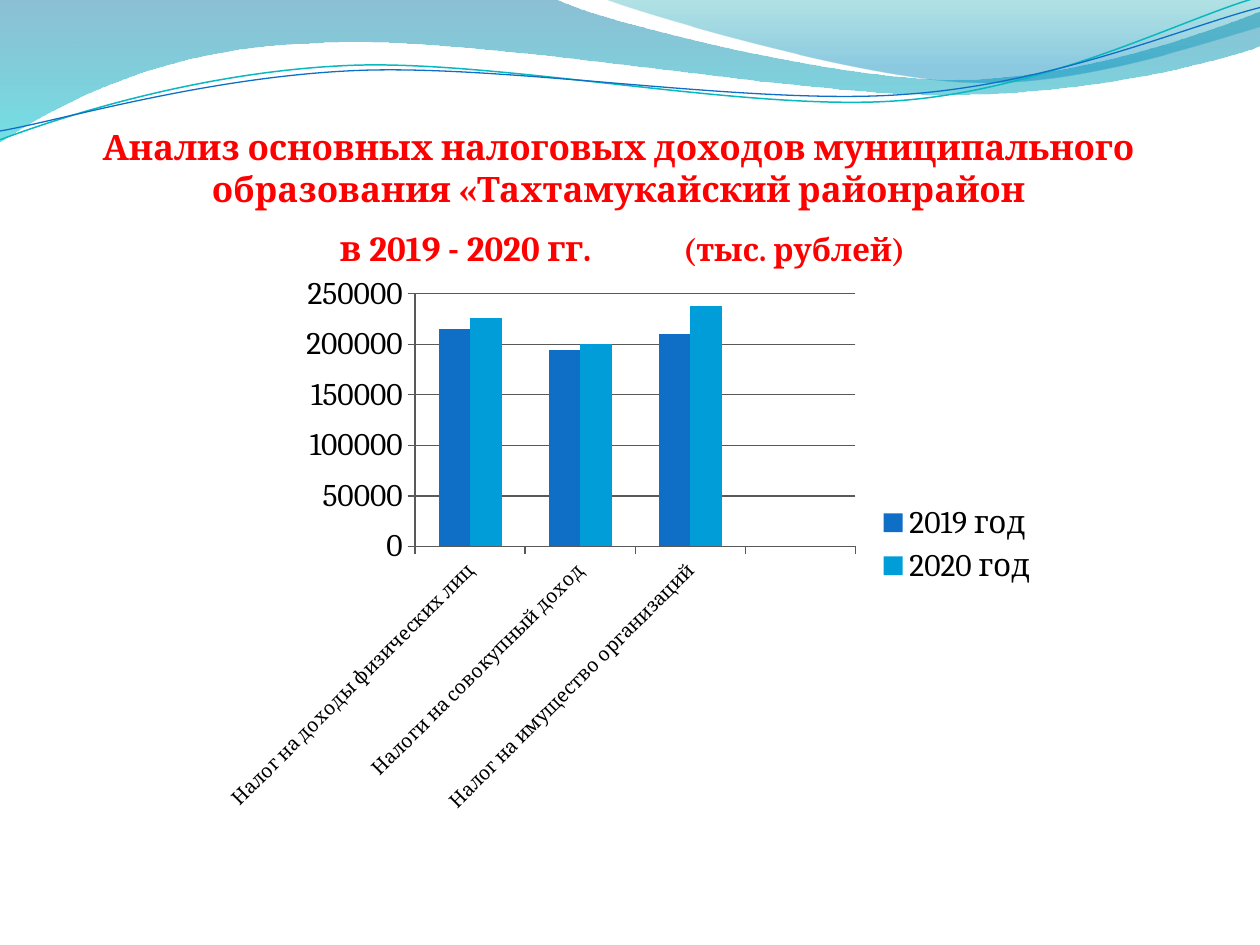
from lxml import etree
from pptx import Presentation
from pptx.chart.data import CategoryChartData
from pptx.dml.color import RGBColor
from pptx.enum.chart import XL_CHART_TYPE, XL_LEGEND_POSITION, XL_TICK_MARK
from pptx.enum.text import MSO_ANCHOR, PP_ALIGN
from pptx.oxml import parse_xml
from pptx.oxml.ns import nsdecls, qn
from pptx.util import Inches, Pt

COLUMNS = XL_CHART_TYPE.COLUMN_CLUSTERED
LEGEND_RIGHT = XL_LEGEND_POSITION.RIGHT
TICK_OUTSIDE = XL_TICK_MARK.OUTSIDE
BOTTOM = MSO_ANCHOR.BOTTOM
CENTER = PP_ALIGN.CENTER

RED = RGBColor(0xFF, 0x00, 0x00)
BLACK = RGBColor(0x00, 0x00, 0x00)
GRAY = RGBColor(0x59, 0x59, 0x59)
BLUE = RGBColor(0x0F, 0x6F, 0xC6)
SKY = RGBColor(0x00, 0x9D, 0xD9)
TEAL = RGBColor(0x0A, 0xB8, 0xBF)
DEEP_BLUE = RGBColor(0x00, 0x74, 0xA1)
CYAN = RGBColor(0x00, 0xC6, 0xCF)
DARK_CYAN = RGBColor(0x00, 0xA1, 0xA9)
MID_BLUE = RGBColor(0x00, 0x8B, 0xBF)
FONT = "Cambria"

presentation = Presentation()
presentation.slide_width = Inches(10)
presentation.slide_height = Inches(7.5)
slide = presentation.slides.add_slide(presentation.slide_layouts[6])


def add_wave(segments, closed):
    """Draw a path of points (x, y) and cubic curves (x1, y1, x2, y2, x3, y3)."""
    anchors = [(Inches(segment[-2]), Inches(segment[-1])) for segment in segments]
    builder = slide.shapes.build_freeform(*anchors[0])
    builder.add_line_segments(anchors[1:], close=closed)
    shape = builder.convert_to_shape()
    shape.shadow.inherit = False
    # Turn straight segments into curves where control points are given
    lines = list(shape._element.spPr.iter(qn("a:lnTo")))
    for line, segment in zip(lines, segments[1:]):
        if len(segment) == 2:
            continue
        line.tag = qn("a:cubicBezTo")
        line.remove(line[0])
        for x, y in zip(segment[::2], segment[1::2]):
            point = etree.SubElement(line, qn("a:pt"))
            point.set("x", str(Inches(x) - shape.left))
            point.set("y", str(Inches(y) - shape.top))
    return shape


# Filled waves: path, then gradient stops (position, colour, opacity in percent)
filled_waves = [
    ([(0, 0), (4.4, -0.01), (4.76, 0.17, 6.64, 0.63, 7.58, 0.63),
      (8.53, 0.63, 9.58, 0.26, 10, 0.09), (10.01, 0.36),
      (9.83, 0.44, 8.7, 0.76, 7.46, 0.75), (6.22, 0.75, 3.82, 0.28, 2.57, 0.34),
      (1.29, 0.36, 0.46, 0.83, -0.01, 1.13)],
     [(0, DEEP_BLUE, 45), (1, CYAN, 55)]),
    ([(4.79, -0.01), (5.09, 0.11, 6.82, 0.62, 7.69, 0.65),
      (8.56, 0.69, 9.61, 0.32, 10, 0.21), (10, 0)],
     [(0, DARK_CYAN, 30), (0.8, MID_BLUE, 45)]),
]
for segments, stops in filled_waves:
    wave = add_wave(segments, True)
    wave.line.fill.background()
    wave.fill.gradient()
    wave.fill.gradient_angle = 270
    for stop, (position, color, _) in zip(wave.fill.gradient_stops, stops):
        stop.position = position
        stop.color.rgb = color
    color_elements = list(wave._element.spPr.iter(qn("a:srgbClr")))
    for color_element, (_, _, opacity) in zip(color_elements, stops):
        etree.SubElement(color_element, qn("a:alpha")).set("val", str(opacity * 1000))

# Thin wave lines
line_waves = [
    ([(0, 1.11), (0.48, 0.93, 1.58, 0.57, 2.77, 0.52), (3.95, 0.47, 5.93, 0.89, 7.13, 0.8),
      (8.33, 0.71, 9.38, 0.15, 9.98, -0.02)], TEAL, 0.85),
    ([(0, 1.04), (0.47, 0.96, 1.64, 0.61, 2.83, 0.56), (4.03, 0.51, 5.97, 0.84, 7.17, 0.75),
      (8.36, 0.67, 9.41, 0.21, 10, 0.06)], BLUE, 0.75),
]
for segments, color, width in line_waves:
    wave = add_wave(segments, False)
    wave.fill.background()
    wave.line.color.rgb = color
    wave.line.width = Pt(width)

# Title
title = slide.shapes.add_textbox(Inches(0.51), Inches(0.68), Inches(8.86), Inches(1.48))
frame = title.text_frame
frame.word_wrap = True
frame.vertical_anchor = BOTTOM
frame.margin_left = frame.margin_right = frame.margin_bottom = 0
frame.margin_top = Inches(0.05)
paragraph = frame.paragraphs[0]
paragraph.alignment = CENTER
paragraph.font.name = FONT
paragraph.font.bold = True
paragraph.font.color.rgb = RED
title_runs = [
    ("Анализ основных налоговых доходов муниципального ", 20),
    ("\n", 20),
    ("образования «Тахтамукайский районрайон ", 20),
    ("\n", 20),
    ("в 2019 - 2020 гг.", 20),
    (" ", 30),
    ("(тыс. рублей)", 18),
]
for text, size in title_runs:
    if text == "\n":
        paragraph.add_line_break()
        continue
    run = paragraph.add_run()
    run.text = text
    run.font.size = Pt(size)
    if text == " ":
        # Wide gap before the unit, made with character spacing
        run.font._element.set("spc", "4600")

# Chart, with a fourth category left empty
data = CategoryChartData()
data.categories = ["Налог на доходы физических лиц", "Налоги на совокупный доход",
                   "Налог на имущество организаций", ""]
data.add_series("2019 год", [215000, 194000, 210000, None])
data.add_series("2020 год", [226000, 200000, 238000, None])
chart = slide.shapes.add_chart(COLUMNS, Inches(1.67), Inches(2.1),
                               Inches(6.67), Inches(4.44), data).chart
chart.has_title = False
chart.font.name = FONT
chart.font.size = Pt(18)
chart.font.color.rgb = BLACK
chart.has_legend = True
chart.legend.position = LEGEND_RIGHT
chart.legend.include_in_layout = False

plot = chart.plots[0]
plot.gap_width = 150
plot.overlap = 0
plot.vary_by_categories = False
for series, color in zip(plot.series, (BLUE, SKY)):
    series.format.fill.solid()
    series.format.fill.fore_color.rgb = color

category_axis, value_axis = chart.category_axis, chart.value_axis
value_axis.minimum_scale = 0
value_axis.maximum_scale = 250000
value_axis.major_unit = 50000
value_axis.has_major_gridlines = True
for axis in (category_axis, value_axis):
    axis.major_tick_mark = TICK_OUTSIDE
for part in (category_axis, value_axis, value_axis.major_gridlines):
    part.format.line.color.rgb = GRAY
category_font = category_axis.tick_labels.font
category_font.size = Pt(11)
category_font.name = FONT
category_font.color.rgb = BLACK
category_axis._element.find(qn("c:txPr")).find(qn("a:bodyPr")).set("rot", "-2700000")

# Fixed place of the plot area, as shares of the chart
plot_area = chart._chartSpace.chart.plotArea
for old_layout in plot_area.findall(qn("c:layout")):
    plot_area.remove(old_layout)
plot_area.insert(0, parse_xml(
    f'<c:layout {nsdecls("c")}><c:manualLayout><c:layoutTarget val="inner"/>'
    '<c:xMode val="edge"/><c:yMode val="edge"/><c:x val="0.2435"/><c:y val="0.052"/>'
    '<c:w val="0.524"/><c:h val="0.452"/></c:manualLayout></c:layout>'))

presentation.save("out.pptx")
